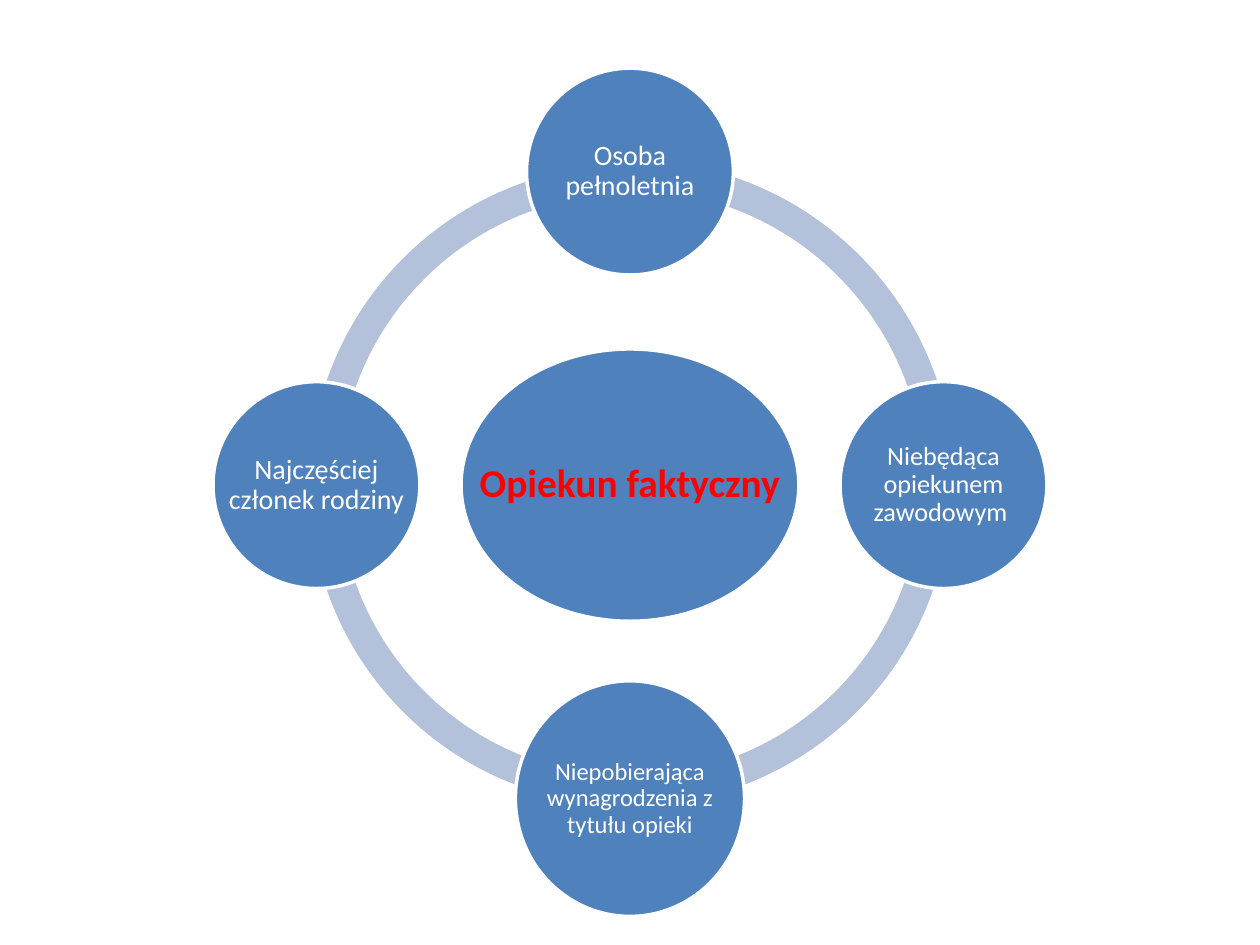
from pptx import Presentation
from pptx.dml.color import RGBColor
from pptx.enum.shapes import MSO_SHAPE
from pptx.enum.text import MSO_ANCHOR, PP_ALIGN
from pptx.util import Cm, Pt

ELLIPSE = MSO_SHAPE.OVAL
BLOCK_ARC = MSO_SHAPE.BLOCK_ARC
MIDDLE = MSO_ANCHOR.MIDDLE
CENTER = PP_ALIGN.CENTER

COLORS = {"circle": "4F81BD", "ring": "B3C1DB", "outline": "FFFFFF",
          "text": "FFFFFF", "accent": "FF0000"}
FONT = "Calibri"

# Ring geometry in centimetres
CENTER_X, CENTER_Y = 12.7, 9.78
RADIUS = 6.32
NODE = 4.17
ARC = 12.93
ARC_THICKNESS = 0.046
QUARTER = 54  # 90 degrees in block arc adjustment units

# Horizontal and vertical direction, width, height, text size, wording
NODES = [
    (0, -1, NODE, NODE, 16, "Osoba pełnoletnia"),
    (1, 0, NODE, NODE, 15, "Niebędąca opiekunem zawodowym "),
    (0, 1, 4.62, 4.75, 14, "Niepobierająca wynagrodzenia z tytułu opieki"),
    (-1, 0, NODE, NODE, 16, "Najczęściej członek rodziny"),
]

# Start quarter, width, height; the top right arc is slightly larger
ARCS = [(2, ARC, ARC), (1, ARC, ARC), (0, ARC, ARC), (3, 13.08, 13.11)]


def set_attributes(target, values):
    for name, value in values.items():
        setattr(target, name, value)


def centered_box(x, y, width, height):
    return Cm(x - width / 2), Cm(y - height / 2), Cm(width), Cm(height)


def add_filled_shape(slide, kind, box, color):
    shape = slide.shapes.add_shape(kind, *box)
    shape.shadow.inherit = False
    shape.fill.solid()
    shape.fill.fore_color.rgb = RGBColor.from_string(COLORS[color])
    shape.line.fill.background()
    return shape


def add_arc(slide, start, width, height):
    box = centered_box(CENTER_X, CENTER_Y, width, height)
    arc = add_filled_shape(slide, BLOCK_ARC, box, "ring")
    arc.adjustments[0] = start * QUARTER
    arc.adjustments[1] = (start + 1) % 4 * QUARTER
    arc.adjustments[2] = ARC_THICKNESS


def add_label(slide, box, text, size, color, bold, inset):
    frame = slide.shapes.add_textbox(*box).text_frame
    sides = ("left", "right", "top", "bottom")
    set_attributes(frame, {f"margin_{side}": Cm(inset) for side in sides})
    set_attributes(frame, {"word_wrap": True, "vertical_anchor": MIDDLE})
    paragraph = frame.paragraphs[0]
    set_attributes(paragraph, {"alignment": CENTER, "line_spacing": 0.9})
    run = paragraph.add_run()
    run.text = text
    set_attributes(run.font, {"name": FONT, "size": Pt(size), "bold": bold})
    run.font.color.rgb = RGBColor.from_string(COLORS[color])


def add_circle(slide, box, text, size, color="text", bold=False, inset=0.05):
    # The label spans the full circle, wider than an ellipse's own text area
    circle = add_filled_shape(slide, ELLIPSE, box, "circle")
    circle.line.color.rgb = RGBColor.from_string(COLORS["outline"])
    circle.line.width = Pt(2)
    add_label(slide, box, text, size, color, bold, inset)


def main():
    presentation = Presentation()
    presentation.slide_width = Cm(25.4)
    presentation.slide_height = Cm(19.05)
    slide = presentation.slides.add_slide(presentation.slide_layouts[6])

    # Ring
    for start, width, height in ARCS:
        add_arc(slide, start, width, height)

    # Central concept
    hub = centered_box(CENTER_X, CENTER_Y, 6.81, 5.49)
    add_circle(slide, hub, "Opiekun faktyczny", 22.5, "accent", True, 0.08)

    # Features around the ring
    for across, down, width, height, size, text in NODES:
        box = centered_box(CENTER_X + across * RADIUS,
                           CENTER_Y + down * RADIUS, width, height)
        add_circle(slide, box, text, size)

    presentation.save("out.pptx")


if __name__ == "__main__":
    main()
